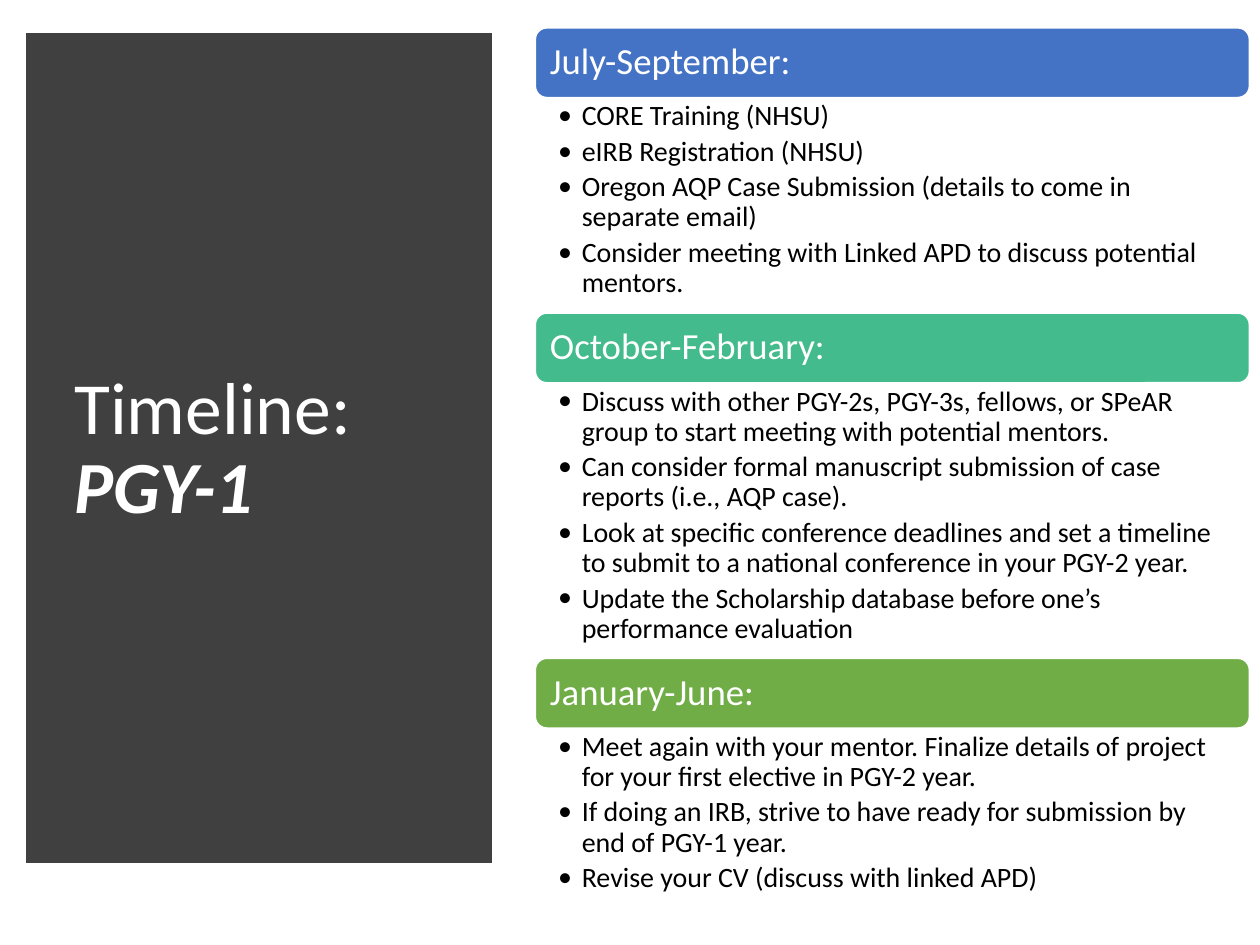
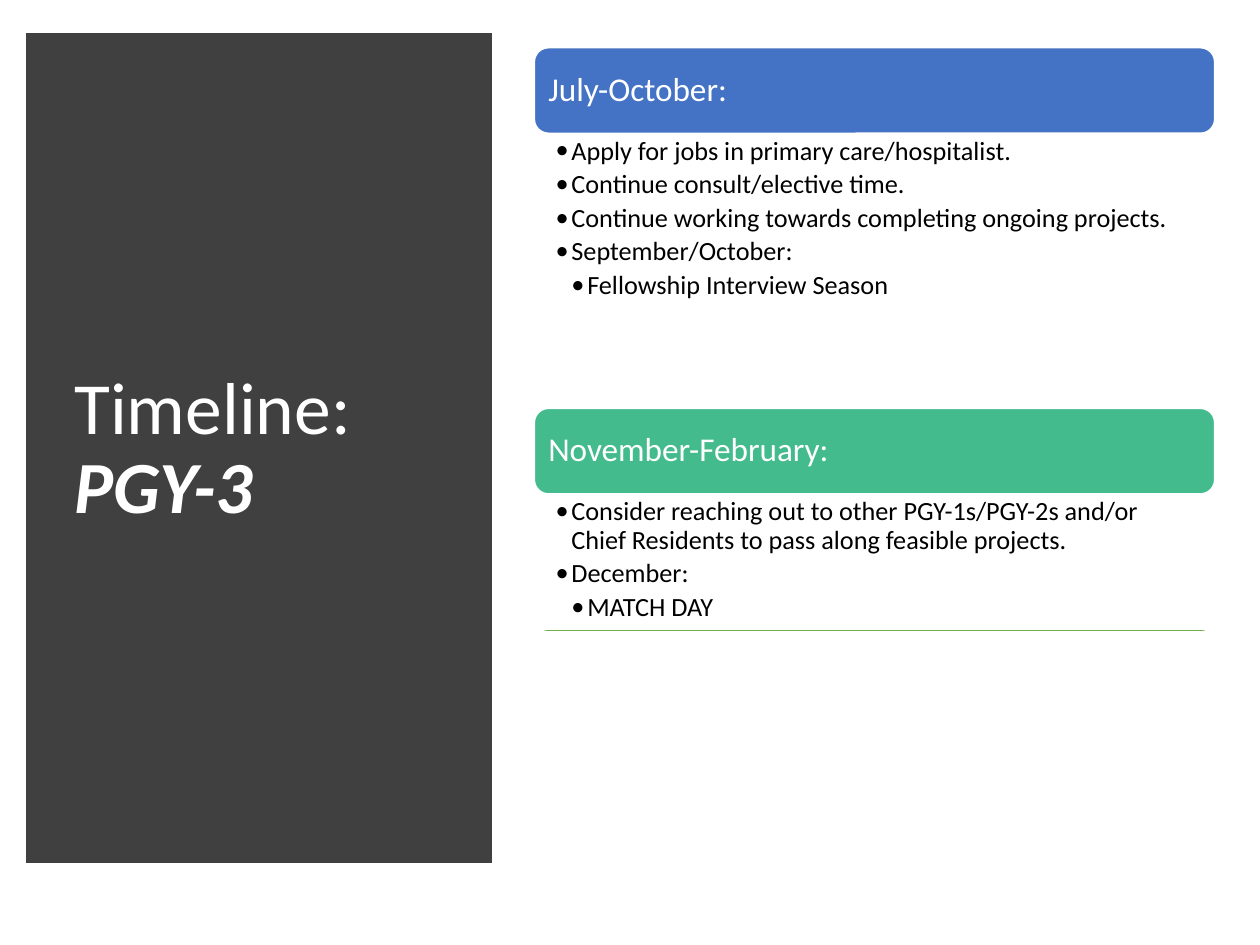
from dataclasses import dataclass

from pptx import Presentation
from pptx.dml.color import RGBColor
from pptx.enum.shapes import MSO_SHAPE as Shape
from pptx.enum.text import MSO_ANCHOR as Anchor, PP_ALIGN as Align
from pptx.oxml.ns import qn
from pptx.util import Cm, Pt
from lxml.etree import SubElement

WHITE = RGBColor(0xFF, 0xFF, 0xFF)
BLACK = RGBColor(0, 0, 0)
DARK = RGBColor(0x40, 0x40, 0x40)
BLUE = RGBColor(0x44, 0x72, 0xC4)
TEAL = RGBColor(0x43, 0xBB, 0x8D)
GREEN = RGBColor(0x70, 0xAD, 0x47)
HUES = BLUE, TEAL, GREEN
FONT = "Calibri"


@dataclass
class Style:
    """Sizes of one timeline: lengths in cm, text in points."""
    left: float
    top: float
    width: float
    band: float
    head: int
    body: int
    step: float
    pad: float
    edges: tuple


YEAR1 = Style(10.79, 0.56, 14.4, 1.41, 21, 16, 0.48, 0.23, (0.46, 0.41))
YEAR3 = Style(10.77, 0.96, 13.72, 1.73, 19, 15, 0.32, 0.2, (0.43, 0.38))

PARTS1 = [
    ("July-September:", 4.34, [
        (1, "CORE Training (NHSU)"),
        (1, "eIRB Registration (NHSU)"),
        (1, "Oregon AQP Case Submission (details to come in separate email)"),
        (1, "Consider meeting with Linked APD to discuss potential mentors."),
    ]),
    ("October-February:", 5.55, [
        (1, "Discuss with other PGY-2s, PGY-3s, fellows, or SPeAR group to "
            "start meeting with potential mentors."),
        (1, "Can consider formal manuscript submission of case reports "
            "(i.e., AQP case)."),
        (1, "Look at specific conference deadlines and set a timeline to "
            "submit to a national conference in your PGY-2 year."),
        (1, "Update the Scholarship database before one’s performance "
            "evaluation"),
    ]),
    ("January-June:", 3.56, [
        (1, "Meet again with your mentor. Finalize details of project for "
            "your first elective in PGY-2 year."),
        (1, "If doing an IRB, strive to have ready for submission by end of "
            "PGY-1 year."),
        (1, "Revise your CV (discuss with linked APD)"),
    ]),
]
PARTS3 = [
    ("July-October:", 5.54, [
        (1, "Apply for jobs in primary care/hospitalist."),
        (1, "Continue consult/elective time."),
        (1, "Continue working towards completing ongoing projects."),
        (1, "September/October:"),
        (2, "Fellowship Interview Season"),
    ]),
    ("November-February:", 2.72, [
        (1, "Consider reaching out to other PGY-1s/PGY-2s and/or Chief "
            "Residents to pass along feasible projects."),
        (1, "December:"),
        (2, "MATCH DAY"),
    ]),
]


def add_box(slide, kind, box, fill, edge, weight):
    """Draw a filled preset shape with sharp line joins in a box in cm."""
    shape = slide.shapes.add_shape(kind, *map(Cm, box))
    shape.shadow.inherit = False
    shape.fill.solid()
    shape.fill.fore_color.rgb = fill
    shape.line.color.rgb = edge
    shape.line.width = Pt(weight)
    SubElement(shape.line._get_or_add_ln(), qn("a:miter")).set("lim", "800000")
    return shape


def set_frame(shape, anchor, left, top, right, low):
    """Set wrapping, anchor and margins, and return the text frame."""
    frame = shape.text_frame
    frame.word_wrap = True
    frame.vertical_anchor = anchor
    frame.margin_left, frame.margin_top = Cm(left), Cm(top)
    frame.margin_right, frame.margin_bottom = Cm(right), Cm(low)
    return frame


def set_para(para, size, color):
    """Give a paragraph its font and spacing."""
    para.alignment = Align.LEFT
    para.line_spacing = 0.9
    para.font.name = FONT
    para.font.size = Pt(size)
    para.font.color.rgb = color


def add_bullet(para, level, step):
    """Give a paragraph a hanging bullet at its level."""
    para.level = level
    props = para._p.get_or_add_pPr()
    props.set("marL", str(Cm(step * level)))
    props.set("indent", str(-Cm(step)))
    rest = props.find(qn("a:defRPr"))
    font = SubElement(props, qn("a:buFont"))
    font.set("typeface", FONT)
    mark = SubElement(props, qn("a:buChar"))
    mark.set("char", "•")
    if rest is not None:
        props.append(rest)


def add_panel(slide, year, box=(0.71, 0.84, 9.04, 16.38)):
    """Draw the dark side panel with the slide title."""
    left, top, width, height = box
    add_box(slide, Shape.RECTANGLE, box, DARK, DARK, 10)
    title = slide.shapes.add_textbox(Cm(left + 0.54), Cm(top + 0.94),
                                     Cm(width - 1.12), Cm(height - 1.78))
    frame = set_frame(title, Anchor.MIDDLE, 0.25, 0.13, 0.25, 0.13)
    para = frame.paragraphs[0]
    set_para(para, 42, WHITE)
    para.add_run().text = "Timeline: "
    run = para.add_run()
    run.text = year
    run.font.bold = run.font.italic = True


def add_band(slide, top, hue, style):
    """Draw one coloured band and return it."""
    box = style.left, top, style.width, style.band
    return add_box(slide, Shape.ROUNDED_RECTANGLE, box, hue, WHITE, 1)


def add_head(slide, text, top, hue, style):
    """Draw a band with its heading."""
    band = add_band(slide, top, hue, style)
    frame = set_frame(band, Anchor.MIDDLE, *[style.pad] * 4)
    frame.text = text
    set_para(frame.paragraphs[0], style.head, WHITE)


def add_list(slide, items, top, height, style):
    """Write the bullets below a band."""
    box = slide.shapes.add_textbox(Cm(style.left), Cm(top),
                                   Cm(style.width), Cm(height))
    start, end = style.edges
    frame = set_frame(box, Anchor.TOP, start, 0.08, end, 0.08)
    frame.text = "\n".join(text for _, text in items)
    for para, (level, _) in zip(frame.paragraphs, items):
        set_para(para, style.body, BLACK)
        para.space_after = Pt(3)
        add_bullet(para, level, style.step)


def add_parts(slide, parts, style):
    """Stack bands and lists, and return where they end."""
    top = style.top
    for (head, height, items), hue in zip(parts, HUES):
        add_head(slide, head, top, hue, style)
        add_list(slide, items, top + style.band, height, style)
        top += style.band + height
    return top


def add_edge(slide, top, style):
    """Close a timeline with the thin top edge of a green band."""
    add_band(slide, top, GREEN, style)
    box = style.left - 0.3, top + 0.05, 14.93, 5.05
    add_box(slide, Shape.RECTANGLE, box, WHITE, WHITE, 1)


def main():
    """Build both timeline slides and save them."""
    deck = Presentation()
    deck.slide_width, deck.slide_height = Cm(25.4), Cm(19.05)
    blank = deck.slide_layouts[6]

    first = deck.slides.add_slide(blank)
    add_panel(first, "PGY-1")
    add_parts(first, PARTS1, YEAR1)

    third = deck.slides.add_slide(blank)
    add_panel(third, "PGY-3")
    end = add_parts(third, PARTS3, YEAR3)
    add_edge(third, end, YEAR3)

    deck.save("out.pptx")


if __name__ == "__main__":
    main()
